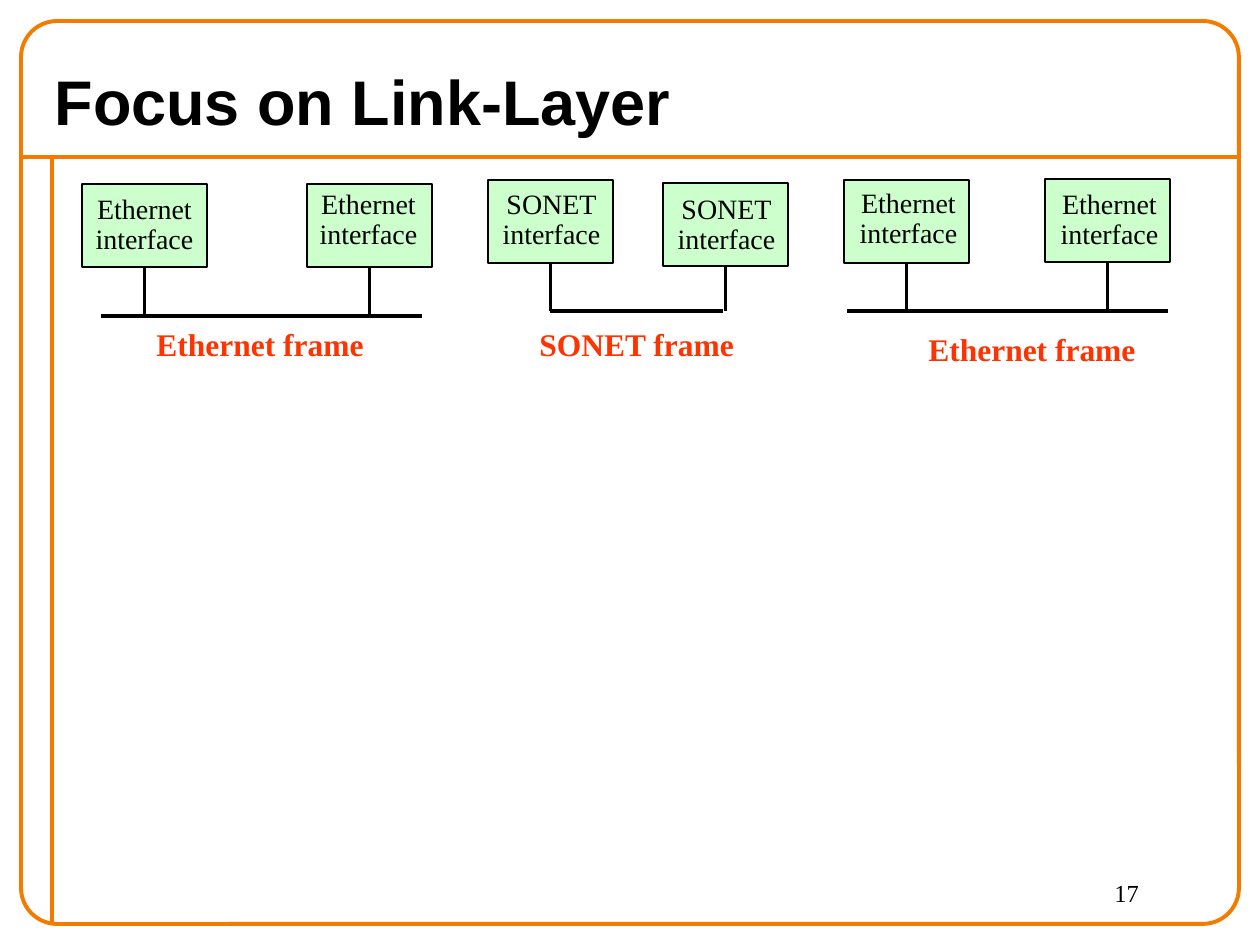
from dataclasses import dataclass

from lxml import etree
from pptx import Presentation
from pptx import util as u
from pptx.dml.color import RGBColor
from pptx.enum import shapes, text
from pptx.oxml.ns import qn

EMU_PER_PX = 914400 / 126
ORANGE = RGBColor(0xF4, 0x7A, 0x00)
GREEN = RGBColor(0xCC, 0xFF, 0xCC)
RED = RGBColor(0xFF, 0x33, 0x00)
BLACK = RGBColor(0, 0, 0)
SERIF = "Times New Roman"

BOX_WIDTH, BOX_HEIGHT = 125, 83
CAPTION_WIDTH, CAPTION_HEIGHT = 123, 73
FRAME_LABEL_HEIGHT = 50


@dataclass(frozen=True)
class Interface:
    left: int
    top: int
    caption_left: int
    caption_top: int


@dataclass(frozen=True)
class Link:
    protocol: str
    interfaces: tuple[Interface, ...]
    bus_left: int
    bus_right: int
    bus_y: int
    label_left: int
    label_top: int
    label_width: int


LINKS = (
    Link("Ethernet", (Interface(82, 184, 83, 189), Interface(307, 184, 307, 184)),
         101, 422, 316, 144, 319, 233),
    Link("SONET", (Interface(488, 180, 490, 184), Interface(663, 183, 665, 189)),
         550, 723, 311, 527, 319, 220),
    Link("Ethernet", (Interface(844, 180, 847, 183), Interface(1045, 179, 1048, 184)),
         847, 1168, 311, 916, 324, 233),
)


def px(length: int) -> u.Emu:
    return u.Emu(round(length * EMU_PER_PX))


def format_text(frame, size: int, font: str = SERIF, color: RGBColor = BLACK,
                bold: bool = False, align=text.PP_ALIGN.LEFT, spacing: float = 1.0) -> None:
    for paragraph in frame.paragraphs:
        paragraph.alignment = align
        paragraph.line_spacing = spacing
        for run in paragraph.runs:
            run.font.size = u.Pt(size)
            run.font.name = font
            run.font.bold = bold
            run.font.color.rgb = color


def add_text(slide, words: str, left: int, top: int, width: int, height: int, **style):
    shape = slide.shapes.add_textbox(px(left), px(top), px(width), px(height))
    frame = shape.text_frame
    frame.text = words
    frame.word_wrap = False
    format_text(frame, **style)
    return shape


def add_line(slide, x1: int, y1: int, x2: int, y2: int, color: RGBColor, weight: float):
    line = slide.shapes.add_connector(
        shapes.MSO_CONNECTOR.STRAIGHT, px(x1), px(y1), px(x2), px(y2))
    line.line.color.rgb = color
    line.line.width = u.Pt(weight)
    etree.SubElement(line._element.spPr, qn("a:effectLst"))
    return line


def add_box(slide, kind, left: int, top: int, width: int, height: int,
            color: RGBColor, weight: float):
    shape = slide.shapes.add_shape(kind, px(left), px(top), px(width), px(height))
    shape.shadow.inherit = False
    shape.fill.background()
    shape.line.color.rgb = color
    shape.line.width = u.Pt(weight)
    return shape


def add_interface(slide, interface: Interface, protocol: str, bus_y: int) -> None:
    box = add_box(slide, shapes.MSO_SHAPE.RECTANGLE, interface.left, interface.top,
                  BOX_WIDTH, BOX_HEIGHT, BLACK, 0.75)
    box.fill.solid()
    box.fill.fore_color.rgb = GREEN
    add_text(slide, f"{protocol}\ninterface", interface.caption_left, interface.caption_top,
             CAPTION_WIDTH, CAPTION_HEIGHT, size=16, align=text.PP_ALIGN.CENTER, spacing=0.9)

    # Stem from the middle of the box's lower side down to the bus
    stem = add_line(slide, interface.left, interface.top, interface.left, bus_y, BLACK, 2)
    stem.begin_connect(box, 2)
    stem.end_x = stem.begin_x


def add_link(slide, link: Link) -> None:
    for interface in link.interfaces:
        add_interface(slide, interface, link.protocol, link.bus_y)
    add_line(slide, link.bus_left, link.bus_y, link.bus_right, link.bus_y, BLACK, 2)
    add_text(slide, f"{link.protocol} frame", link.label_left, link.label_top,
             link.label_width, FRAME_LABEL_HEIGHT, size=18, color=RED, bold=True)


def main() -> None:
    presentation = Presentation()
    presentation.slide_width, presentation.slide_height = px(1260), px(945)
    slide = presentation.slides.add_slide(presentation.slide_layouts[5])

    # Border and rules
    add_line(slide, 21, 157, 1239, 157, ORANGE, 2.25)
    add_line(slide, 52, 157, 52, 924, ORANGE, 2.25)
    border = add_box(slide, shapes.MSO_SHAPE.ROUNDED_RECTANGLE, 21, 21, 1218, 903, ORANGE, 2.25)
    border.adjustments[0] = 0.04

    # Title and page number
    title = slide.shapes.title
    title.left, title.top, title.width, title.height = px(42), px(53), px(1187), px(95)
    title.text_frame.text = "Focus on Link-Layer"
    title.text_frame.vertical_anchor = text.MSO_ANCHOR.MIDDLE
    format_text(title.text_frame, 36, font="Arial", bold=True)
    add_text(slide, "17", 1102, 872, 126, 53, size=14)

    # Links between pairs of interfaces
    for link in LINKS:
        add_link(slide, link)

    presentation.save("out.pptx")


if __name__ == "__main__":
    main()
